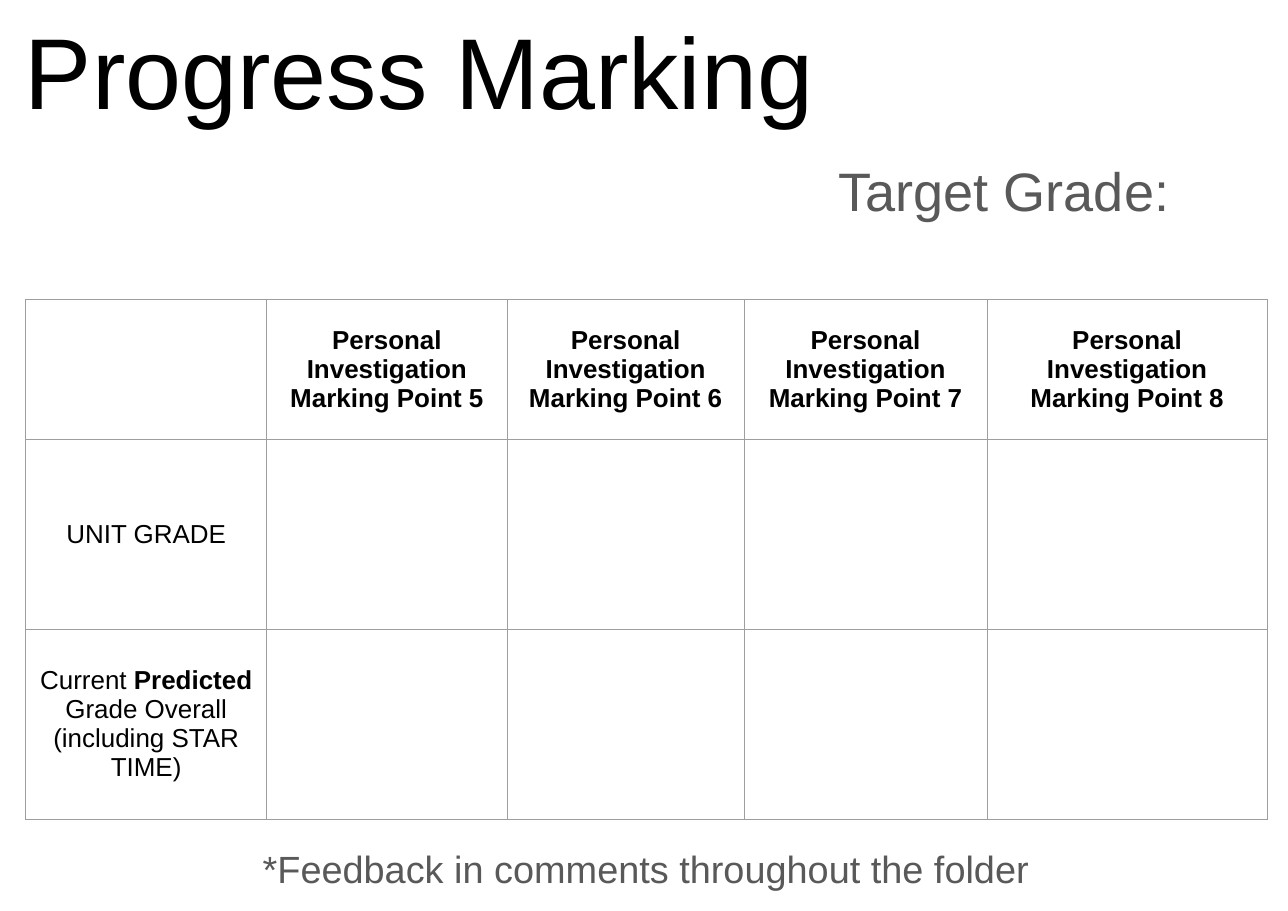
from dataclasses import dataclass

from lxml.etree import SubElement
from pptx import Presentation
from pptx.dml.color import RGBColor
from pptx.enum.text import MSO_ANCHOR, MSO_AUTO_SIZE, PP_ALIGN
from pptx.oxml.ns import qn
from pptx.shapes.base import BaseShape
from pptx.slide import Slide
from pptx.table import _Cell
from pptx.util import Pt


@dataclass(frozen=True)
class Theme:
    font: str = "Arial"
    ink: str = "000000"
    muted: str = "595959"
    rule: str = "9E9E9E"
    title_size: float = 93
    target_size: float = 50
    footnote_size: float = 35
    cell_size: float = 24
    text_inset: float = 13
    cell_inset: float = 7.2
    rule_width: float = 0.75


@dataclass(frozen=True)
class Heading:
    text: str
    left: float
    top: float
    width: float
    height: float
    size: float
    color: str
    anchor: MSO_ANCHOR = MSO_ANCHOR.TOP
    align: PP_ALIGN = PP_ALIGN.LEFT


@dataclass(frozen=True)
class Span:
    text: str
    bold: bool = False


THEME = Theme()
TITLE = Heading("Progress Marking", 10.1, 25.2, 828.7, 107.3,
                THEME.title_size, THEME.ink, MSO_ANCHOR.BOTTOM)
TARGET = Heading("Target Grade:", 762.1, 132.5, 428.4, 129.6,
                 THEME.target_size, THEME.muted)
FOOTNOTE = Heading("*Feedback in comments throughout the folder", 23.8, 768.6, 1147, 49.7,
                   THEME.footnote_size, THEME.muted, align=PP_ALIGN.CENTER)

PAGE_WIDTH, PAGE_HEIGHT = 1190.5, 841.88
COLUMN_WIDTHS = (222.5, 222.5, 218.9, 224.6, 258.9)
ROW_HEIGHTS = (129.1, 175.7, 175.7)
MARKING_POINTS = range(5, 9)
ROW_LABELS = (
    (Span("UNIT GRADE"),),
    (Span("Current "), Span("Predicted", True), Span(" Grade Overall (including STAR TIME)")),
)


def write_heading(box: BaseShape, heading: Heading) -> None:
    box.left, box.top = Pt(heading.left), Pt(heading.top)
    box.width, box.height = Pt(heading.width), Pt(heading.height)
    frame = box.text_frame
    frame.word_wrap = True
    frame.auto_size = MSO_AUTO_SIZE.NONE
    frame.vertical_anchor = heading.anchor
    frame.margin_left = frame.margin_right = Pt(THEME.text_inset)
    frame.margin_top = frame.margin_bottom = Pt(THEME.text_inset)
    para = frame.paragraphs[0]
    para.text = heading.text
    para.alignment = heading.align
    para.space_before = Pt(0)
    para.font.name = THEME.font
    para.font.size = Pt(heading.size)
    para.font.color.rgb = RGBColor.from_string(heading.color)


def style_cell(cell: _Cell) -> None:
    cell.margin_left = cell.margin_right = Pt(THEME.cell_inset)
    cell.margin_top = cell.margin_bottom = Pt(THEME.cell_inset)
    cell.vertical_anchor = MSO_ANCHOR.MIDDLE
    properties = cell._tc.get_or_add_tcPr()
    for side in ("a:lnL", "a:lnR", "a:lnT", "a:lnB"):
        line = SubElement(properties, qn(side), w=str(Pt(THEME.rule_width)))
        fill = SubElement(line, qn("a:solidFill"))
        SubElement(fill, qn("a:srgbClr"), val=THEME.rule)
    cell.fill.background()


def write_cell(cell: _Cell, spans: tuple[Span, ...]) -> None:
    para = cell.text_frame.paragraphs[0]
    para.alignment = PP_ALIGN.CENTER
    para.font.name = THEME.font
    para.font.size = Pt(THEME.cell_size)
    para.font.color.rgb = RGBColor.from_string(THEME.ink)
    for span in spans:
        run = para.add_run()
        run.text = span.text
        run.font.bold = span.bold


def add_marking_table(page: Slide) -> None:
    table = page.shapes.add_table(
        len(ROW_HEIGHTS), len(COLUMN_WIDTHS), Pt(23.8), Pt(276.6),
        Pt(sum(COLUMN_WIDTHS)), Pt(sum(ROW_HEIGHTS))).table
    table.first_row = table.horz_banding = False
    for column, width in zip(table.columns, COLUMN_WIDTHS):
        column.width = Pt(width)
    for row, height in zip(table.rows, ROW_HEIGHTS):
        row.height = Pt(height)
    for cell in table.iter_cells():
        style_cell(cell)
    for column, point in enumerate(MARKING_POINTS, start=1):
        label = Span(f"Personal Investigation Marking Point {point}", True)
        write_cell(table.cell(0, column), (label,))
    for row, spans in enumerate(ROW_LABELS, start=1):
        write_cell(table.cell(row, 0), spans)


def main() -> None:
    deck = Presentation()
    deck.slide_width, deck.slide_height = Pt(PAGE_WIDTH), Pt(PAGE_HEIGHT)
    page = deck.slides.add_slide(deck.slide_layouts[0])
    write_heading(page.shapes.title, TITLE)
    write_heading(page.placeholders[1], TARGET)
    add_marking_table(page)
    write_heading(page.shapes.add_textbox(0, 0, 0, 0), FOOTNOTE)
    deck.save("out.pptx")


if __name__ == "__main__":
    main()
